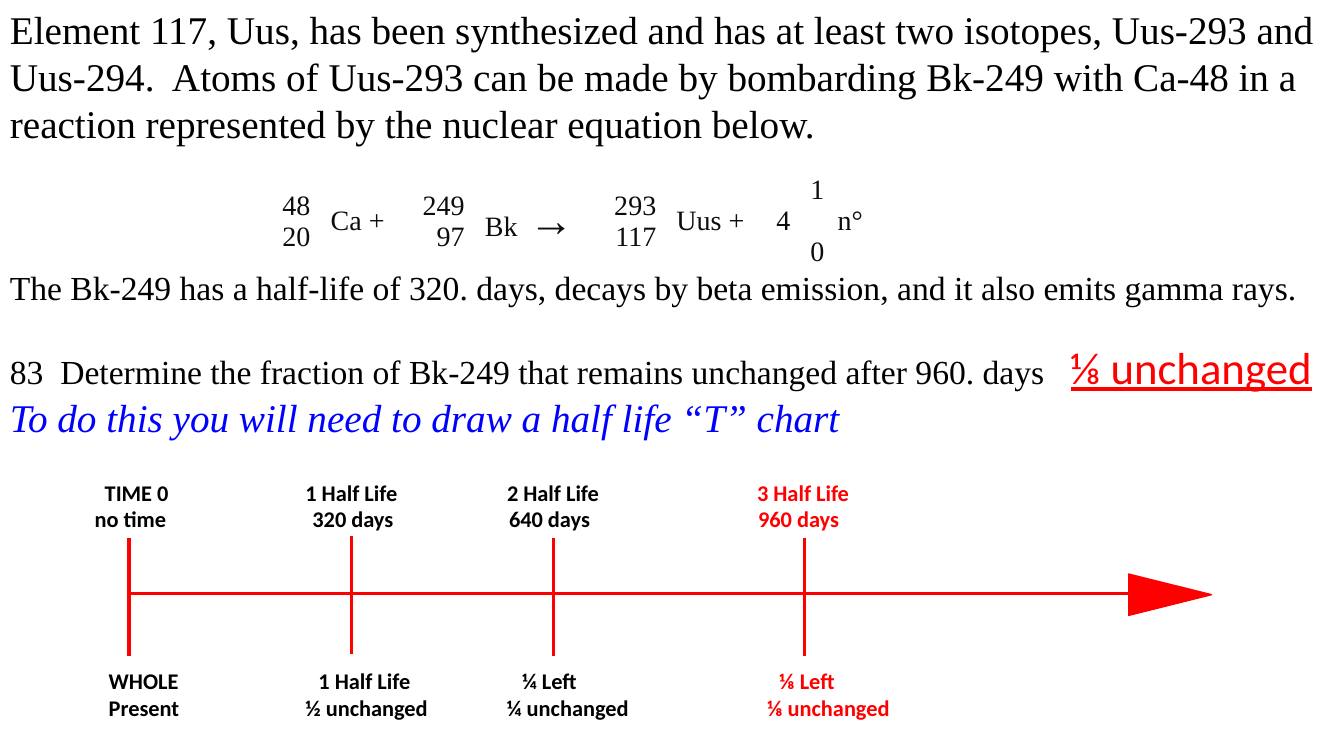
from dataclasses import dataclass

from lxml import etree
from pptx import Presentation
from pptx import util as u
from pptx.dml import color
from pptx.enum import shapes, text
from pptx.oxml import ns

COLORS = {"black": "000000", "ink": "0D0D0D", "red": "FF0000", "blue": "0000FF"}
SERIF = "Times New Roman"
SANS = "Calibri"


@dataclass
class Tick:
    x: float
    top: float = 5.34


@dataclass
class LabelRow:
    labels: tuple[str, ...]
    stops: tuple[float, ...]


@dataclass
class LabelBox:
    left: float
    top: float
    rows: tuple[LabelRow, ...]


@dataclass
class EquationCell:
    width: float
    text: str
    right: bool = False
    arrow: str = ""


EQUATION = (
    EquationCell(0.52, "48\n20", right=True),
    EquationCell(0.83, "Ca +"),
    EquationCell(0.7, "249\n97", right=True),
    EquationCell(1.14, "Bk", arrow=" →"),
    EquationCell(0.76, "293\n117", right=True),
    EquationCell(0.92, "Uus +"),
    EquationCell(0.41, "4", right=True),
    EquationCell(0.27, "1\n0"),
    EquationCell(2.64, "n°"),
)
TICKS = (Tick(1.28), Tick(3.49, 5.32), Tick(5.49), Tick(7.98))
LABEL_BOXES = (
    LabelBox(0.84, 4.7, (
        LabelRow(("", "TIME 0", "1 Half Life", "2 Half Life", "3 Half Life"),
                 (0.1, 2.09, 4.09, 6.57)),
        LabelRow(("no time", "320 days", "640 days", "960 days"),
                 (2.16, 4.11, 6.58)),
    )),
    LabelBox(0.98, 6.57, (
        LabelRow(("WHOLE", "1 Half Life", "¼ Left", "⅛ Left"),
                 (2.08, 4.1, 6.65)),
        LabelRow(("Present", "½ unchanged", "¼ unchanged", "⅛ unchanged"),
                 (1.95, 3.95, 6.53)),
    )),
)


def rgb(name: str) -> color.RGBColor:
    return color.RGBColor.from_string(COLORS[name])


def add_text(p, content: str, *, size: float, font: str = SERIF, ink: str = "black",
             bold: bool = False, italic: bool = False, underline: bool = False) -> None:
    for i, line in enumerate(content.split("\n")):
        if i:
            p.add_line_break()
        r = p.add_run()
        r.text = line
        r.font.size = u.Pt(size)
        r.font.name = font
        r.font.color.rgb = rgb(ink)
        r.font.bold = bold
        r.font.italic = italic
        r.font.underline = underline


def add_tabs(p, stops: tuple[float, ...]) -> None:
    tabs = etree.SubElement(p._p.get_or_add_pPr(), ns.qn("a:tabLst"))
    for stop in stops:
        etree.SubElement(tabs, ns.qn("a:tab"), pos=str(u.Inches(stop)), algn="l")


def add_box(s, left: float, top: float, width: float, height: float):
    tf = s.shapes.add_textbox(
        u.Inches(left), u.Inches(top), u.Inches(width), u.Inches(height)).text_frame
    tf.word_wrap = True
    tf.auto_size = text.MSO_AUTO_SIZE.SHAPE_TO_FIT_TEXT
    return tf


def add_line(s, x1: float, y1: float, x2: float, y2: float) -> None:
    line = s.shapes.add_connector(
        shapes.MSO_CONNECTOR.STRAIGHT,
        u.Inches(x1), u.Inches(y1), u.Inches(x2), u.Inches(y2))
    line.line.color.rgb = rgb("red")
    line.line.width = u.Pt(2.25)
    etree.SubElement(line._element.spPr, ns.qn("a:effectLst"))


def add_equation(s, cells: tuple[EquationCell, ...]) -> None:
    table = s.shapes.add_table(
        1, len(cells), u.Inches(2.66), u.Inches(1.66),
        u.Inches(8.19), u.Inches(0.8)).table
    table.first_row = False
    table.horz_banding = False
    for i, item in enumerate(cells):
        table.columns[i].width = u.Inches(item.width)
        cell = table.cell(0, i)
        cell.fill.background()
        cell.vertical_anchor = text.MSO_ANCHOR.MIDDLE
        p = cell.text_frame.paragraphs[0]
        p.alignment = text.PP_ALIGN.RIGHT if item.right else text.PP_ALIGN.LEFT
        add_text(p, item.text, size=20, ink="ink")
        if item.arrow:
            add_text(p, item.arrow, size=32, ink="ink")


def add_question(s) -> None:
    tf = add_box(s, 0, 2.6, 13.33, 1.85)
    add_text(tf.paragraphs[0], "The Bk-249 has a half-life of 320. days, decays by beta "
             "emission, and it also emits gamma rays.", size=24)
    p = tf.add_paragraph()
    p.space_before = u.Pt(23)
    add_tabs(p, (10.52,))
    add_text(p, "83  Determine the fraction of Bk-249 that remains unchanged "
             "after 960. days\t", size=24)
    add_text(p, "⅛ unchanged", size=32, font=SANS, ink="red", underline=True)
    add_text(tf.add_paragraph(), "To do this you will need to draw a half life “T” chart",
             size=28, ink="blue", italic=True)


def add_timeline(s) -> None:
    for tick in TICKS:
        add_line(s, tick.x, tick.top, tick.x, tick.top + 1.17)
    add_line(s, TICKS[0].x, 5.89, 11.67, 5.89)
    sp = s.shapes.add_shape(
        shapes.MSO_SHAPE.ISOSCELES_TRIANGLE,
        u.Inches(11.4), u.Inches(5.49), u.Inches(0.41), u.Inches(0.82))
    sp.rotation = 90
    sp.shadow.inherit = False
    sp.fill.solid()
    sp.fill.fore_color.rgb = rgb("red")
    sp.line.color.rgb = rgb("red")
    sp.line.width = u.Pt(1)


def add_labels(s, box: LabelBox) -> None:
    tf = add_box(s, box.left, box.top, 8.35, 0.64)
    for i, row in enumerate(box.rows):
        p = tf.add_paragraph() if i else tf.paragraphs[0]
        add_tabs(p, row.stops)
        *early, last = row.labels
        add_text(p, "\t".join(early) + "\t", size=16, font=SANS, bold=True)
        add_text(p, last, size=16, font=SANS, ink="red", bold=True)


def main() -> None:
    prs = Presentation()
    prs.slide_width = u.Inches(13.33)
    prs.slide_height = u.Inches(7.5)
    s = prs.slides.add_slide(prs.slide_layouts[6])
    intro = add_box(s, 0, 0, 13.33, 1.51)
    add_text(intro.paragraphs[0], "Element 117, Uus, has been synthesized and has at least "
             "two isotopes, Uus-293 and Uus-294.  Atoms of Uus-293 can be made by "
             "bombarding Bk-249 with Ca-48 in a reaction represented by the nuclear "
             "equation below.", size=28)
    add_equation(s, EQUATION)
    add_question(s)
    add_timeline(s)
    for box in LABEL_BOXES:
        add_labels(s, box)
    prs.save("out.pptx")


if __name__ == "__main__":
    main()
